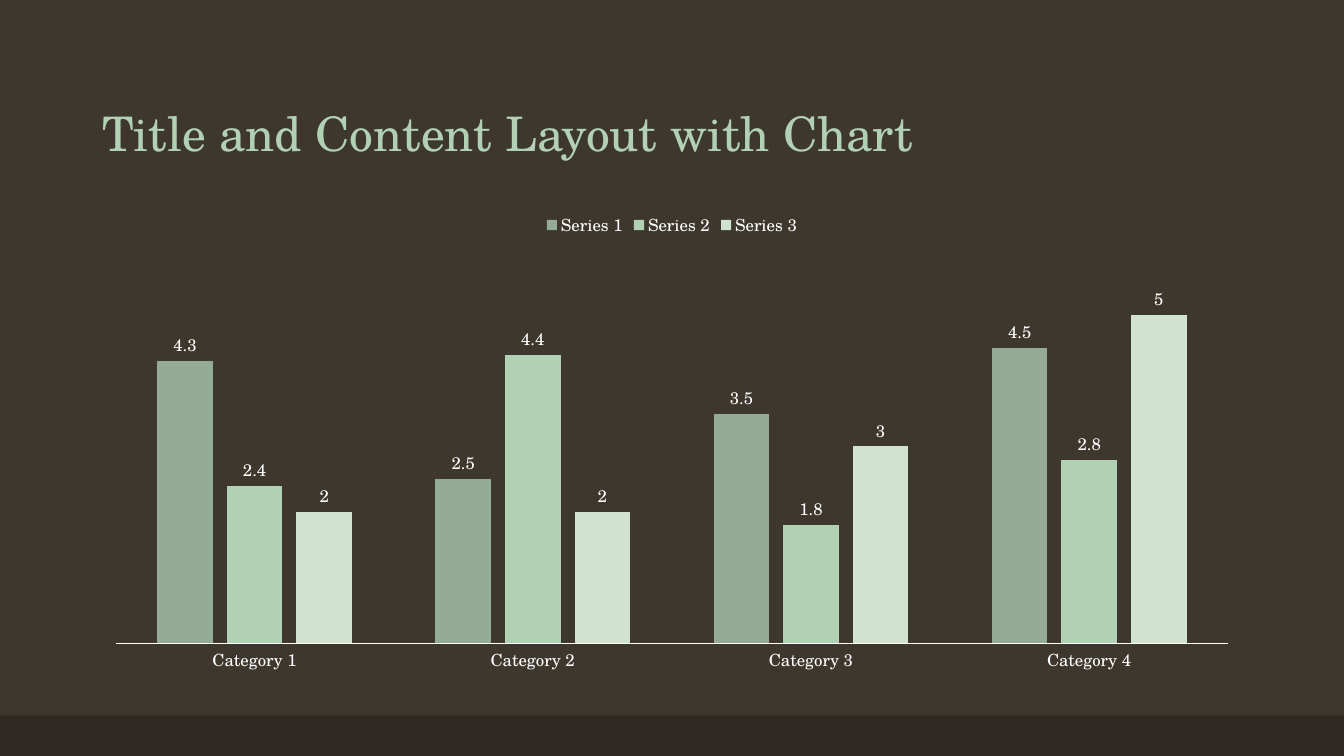
from dataclasses import dataclass

import lxml.etree
import pptx
import pptx.chart.data
import pptx.dml.color
import pptx.enum.chart
import pptx.enum.shapes
import pptx.enum.text
import pptx.oxml
import pptx.oxml.ns
import pptx.util

Pt = pptx.util.Pt


@dataclass(frozen=True)
class Theme:
    face: str = "TeX Gyre Schola"
    back: str = "3D372E"
    band: str = "2E2923"
    head: str = "B2D0B4"
    text: str = "FFFFFF"
    title: int = 34
    label: int = 12


@dataclass(frozen=True)
class Box:
    left: float
    top: float
    width: float
    height: float

    def spots(self) -> tuple:
        return tuple(Pt(v) for v in (self.left, self.top, self.width, self.height))


@dataclass(frozen=True)
class Series:
    name: str
    color: str
    vals: tuple


THEME = Theme()
GROUPS = [f"Category {n}" for n in range(1, 5)]
SERIES = [
    Series("Series 1", "94AC95", (4.3, 2.5, 3.5, 4.5)),
    Series("Series 2", "B2D0B4", (2.4, 4.4, 1.8, 2.8)),
    Series("Series 3", "D1E2D2", (2, 2, 3, 5)),
]
PLOT = {"x": 0.02, "y": 0.1, "w": 0.96, "h": 0.82}


def paint(fill, color: str) -> None:
    fill.solid()
    fill.fore_color.rgb = pptx.dml.color.RGBColor.from_string(color)


def style(font, size: int, color: str) -> None:
    font.name = THEME.face
    font.size = Pt(size)
    font.bold = False
    font.color.rgb = pptx.dml.color.RGBColor.from_string(color)


def add_band(slide, box: Box) -> None:
    band = slide.shapes.add_shape(
        pptx.enum.shapes.MSO_SHAPE.RECTANGLE, *box.spots())
    band.shadow.inherit = False
    paint(band.fill, THEME.band)
    band.line.fill.background()


def add_title(slide, box: Box, text: str) -> None:
    frame = slide.shapes.add_textbox(*box.spots()).text_frame
    frame.word_wrap = True
    frame.vertical_anchor = pptx.enum.text.MSO_ANCHOR.BOTTOM
    frame.text = text
    line = frame.paragraphs[0]
    line.line_spacing = 0.9
    style(line.runs[0].font, THEME.title, THEME.head)


def set_plot(chart) -> None:
    area = chart._chartSpace.chart.plotArea
    for old in area.findall(pptx.oxml.ns.qn("c:layout")):
        area.remove(old)
    parts = [("layoutTarget", "inner"), ("xMode", "edge"), ("yMode", "edge")]
    parts += PLOT.items()
    body = "".join(f'<c:{tag} val="{val}"/>' for tag, val in parts)
    area.insert(0, pptx.oxml.parse_xml(
        f'<c:layout {pptx.oxml.ns.nsdecls("c")}>'
        f"<c:manualLayout>{body}</c:manualLayout></c:layout>"))


def add_bars(slide, box: Box) -> None:
    data = pptx.chart.data.CategoryChartData(number_format="General")
    data.categories = GROUPS
    for item in SERIES:
        data.add_series(item.name, item.vals)
    chart = slide.shapes.add_chart(
        pptx.enum.chart.XL_CHART_TYPE.COLUMN_CLUSTERED, *box.spots(), data).chart
    style(chart.font, THEME.label, THEME.text)
    chart.has_title = False
    chart.has_legend = True
    chart.legend.position = pptx.enum.chart.XL_LEGEND_POSITION.TOP
    chart.legend.include_in_layout = False
    style(chart.legend.font, THEME.label, THEME.text)

    axis = chart.category_axis
    axis.major_tick_mark = pptx.enum.chart.XL_TICK_MARK.NONE
    axis.format.line.width = Pt(0.75)
    paint(axis.format.line.fill, THEME.text)
    style(axis.tick_labels.font, THEME.label, THEME.text)
    scale = chart.value_axis
    scale.minimum_scale, scale.maximum_scale = 0, 6
    scale.has_major_gridlines = False
    scale.visible = False

    plot = chart.plots[0]
    plot.vary_by_categories = False
    plot.gap_width, plot.overlap = 150, -25
    for bars, item in zip(plot.series, SERIES):
        paint(bars.format.fill, item.color)
        tags = bars.data_labels
        tags.show_value = True
        tags.position = pptx.enum.chart.XL_LABEL_POSITION.OUTSIDE_END
        style(tags.font, THEME.label, THEME.text)
    set_plot(chart)


def main() -> None:
    deck = pptx.Presentation()
    deck.slide_width, deck.slide_height = Pt(960), Pt(540)
    slide = deck.slides.add_slide(deck.slide_layouts[6])
    paint(slide.background.fill, THEME.back)
    add_band(slide, Box(0, 511.2, 960, 28.8))
    add_title(slide, Box(66, 28.8, 828, 90), "Title and Content Layout with Chart")
    add_bars(slide, Box(66, 144, 828, 343))
    deck.save("out.pptx")


if __name__ == "__main__":
    main()
